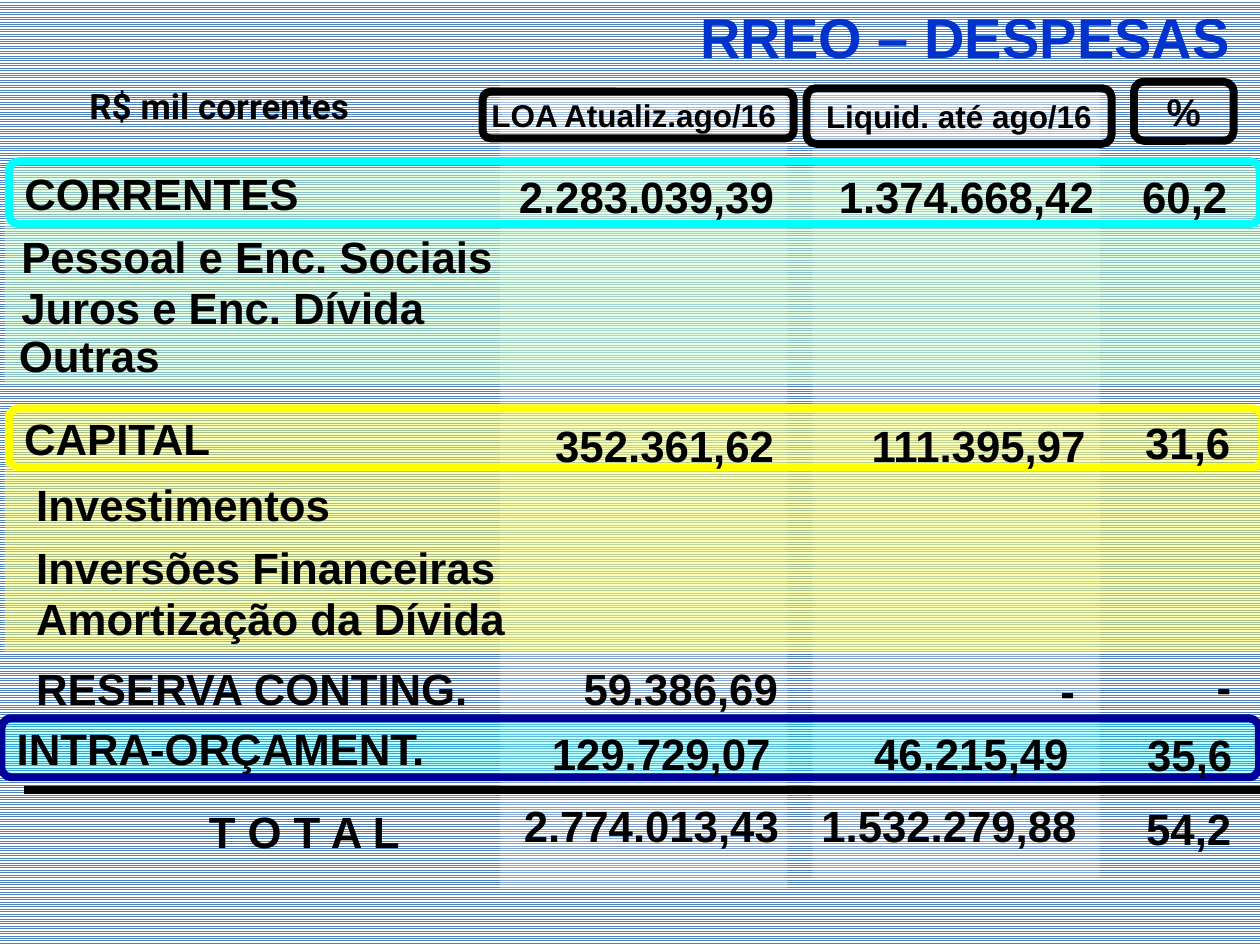
from lxml import etree
from pptx import Presentation
from pptx import util as u
from pptx.dml.color import RGBColor
from pptx.enum import dml, shapes, text
from pptx.oxml.ns import qn

COLORS = {
    "black": "000000", "white": "FFFFFF", "stripe": "4F81BD", "title": "0033CC",
    "green": "CCFFCC", "lemon": "FFFF66", "cyan": "00FFFF", "yellow": "FFFF00",
    "navy": "000099",
}
LEFT, CENTER, RIGHT = text.PP_ALIGN.LEFT, text.PP_ALIGN.CENTER, text.PP_ALIGN.RIGHT
RECT, ROUND = shapes.MSO_SHAPE.RECTANGLE, shapes.MSO_SHAPE.ROUNDED_RECTANGLE
LINE_WIDTH = u.Pt(4.5)
ROW_HEIGHT = 1.32


def rgb(name):
    return RGBColor.from_string(COLORS[name])


def apply_format(target, values):
    for attribute, value in values.items():
        setattr(target, attribute, value)


def write(frame, wording, size, align, color="black", font="Arial"):
    paragraph = frame.paragraphs[0]
    paragraph.alignment = align
    run = paragraph.add_run()
    run.text = wording
    apply_format(run.font, {"size": u.Pt(size), "bold": True, "name": font})
    run.font.color.rgb = rgb(color)


def add_label(slide, wording, box, align=LEFT, size=25, wrap=True, **style):
    label = slide.shapes.add_textbox(*map(u.Cm, box))
    apply_format(label.text_frame, {
        "word_wrap": wrap, "auto_size": text.MSO_AUTO_SIZE.SHAPE_TO_FIT_TEXT})
    write(label.text_frame, wording, size, align, **style)


def add_box(slide, kind, box, fill=None, opacity=100, outline=None):
    panel = slide.shapes.add_shape(kind, *map(u.Cm, box))
    panel.shadow.inherit = False
    if fill:
        panel.fill.solid()
        panel.fill.fore_color.rgb = rgb(fill)
        tint = panel.fill._xPr.find(qn("a:solidFill"))[0]
        etree.SubElement(tint, qn("a:alpha"), val=str(opacity * 1000))
    else:
        panel.fill.background()
    if outline:
        panel.line.color.rgb = rgb(outline)
        panel.line.width = LINE_WIDTH
    else:
        panel.line.fill.background()
    return panel


def add_frame(slide, wording, box, align=LEFT, size=25, **look):
    frame = add_box(slide, ROUND, box, **look)
    apply_format(frame.text_frame, {
        "word_wrap": False, "vertical_anchor": text.MSO_ANCHOR.MIDDLE})
    write(frame.text_frame, wording, size, align)


def add_figures(slide, figures):
    for wording, left, top, width in figures:
        add_label(slide, wording, (left, top, width, ROW_HEIGHT), RIGHT)


def add_details(slide, left, details):
    for wording, top, width in details:
        add_label(slide, wording, (left, top, width, ROW_HEIGHT))


def add_total_rule(slide):
    y = u.Cm(15.93)
    rule = slide.shapes.add_connector(
        shapes.MSO_CONNECTOR.STRAIGHT, u.Cm(0.48), y, u.Cm(25.43), y)
    rule.line.color.rgb = rgb("black")
    rule.line.width = LINE_WIDTH
    etree.SubElement(rule._element.spPr, qn("a:effectLst"))


def main():
    deck = Presentation()
    deck.slide_width, deck.slide_height = u.Cm(25.4), u.Cm(19.05)
    slide = deck.slides.add_slide(deck.slide_layouts[6])

    # Striped background
    backdrop = slide.background.fill
    backdrop.patterned()
    backdrop.pattern = dml.MSO_PATTERN.NARROW_HORIZONTAL
    backdrop.fore_color.rgb = rgb("stripe")
    backdrop.back_color.rgb = rgb("white")

    # Value columns and their headings
    columns = [
        ("LOA Atualiz.ago/16 ", (10.08, 1.7, 5.79, 16.21), (9.73, 1.85, 6.27, 0.94)),
        ("Liquid. até ago/16", (16.38, 1.68, 5.79, 16.03), (16.26, 1.78, 6.15, 1.12)),
    ]
    for heading, band, heading_box in columns:
        add_box(slide, RECT, band, fill="white", opacity=28)
        add_frame(slide, heading, heading_box, CENTER, 18,
                  fill="white", opacity=28, outline="black")

    # Current expenses panel
    add_box(slide, RECT, (0.1, 3.38, 25.4, 4.37), fill="green", opacity=50)
    add_details(slide, 0.18, [("Pessoal e Enc. Sociais", 4.5, 10.36),
                              ("Juros e Enc. Dívida", 5.54, 9.17)])
    add_details(slide, 0.13, [("Outras", 6.5, 5)])
    add_frame(slide, "%", (22.86, 1.65, 2.01, 1.19), CENTER, 22, outline="black")

    # Capital expenses panel
    add_box(slide, RECT, (0.1, 8.31, 25.5, 4.83), fill="lemon", opacity=50)
    add_details(slide, 0.48, [("Investimentos", 9.5, 7.37),
                              ("Inversões Financeiras", 10.77, 10.21),
                              ("Amortização da Dívida", 11.81, 10.39)])
    add_label(slide, "R$ mil correntes", (0.89, 1.57, 6.4, 1.12), RIGHT, 20,
              wrap=False, font="Roboto")

    # Total
    add_frame(slide, "T O T A L", (0.84, 16.15, 10.59, 1.19), CENTER)
    add_figures(slide, [("2.774.013,43", 8.94, 15.98, 7.01),
                        ("1.532.279,88", 14.94, 15.98, 7.01),
                        ("54,2", 22.68, 16.03, 2.39)])

    # Contingency reserve
    add_details(slide, 0.48, [("RESERVA CONTING.", 13.21, 10.39)])
    add_figures(slide, [("59.386,69", 9.73, 13.21, 6.2),
                        ("-", 15.72, 13.26, 6.2),
                        ("-", 22.68, 13.18, 2.39)])

    # Title
    add_label(slide, "RREO – DESPESAS", (3.1, -0.08, 21.95, 1.63), RIGHT, 32,
              color="title")

    # Framed rows
    add_frame(slide, "CORRENTES", (0.18, 3.25, 25.22, 1.27), outline="cyan")
    add_figures(slide, [("2.283.039,39", 9.65, 3.3, 6.2),
                        ("1.374.668,42", 16.1, 3.3, 6.2),
                        ("60,2", 22.25, 3.3, 2.74)])
    add_frame(slide, "CAPITAL", (0.18, 8.23, 25.27, 1.19), outline="yellow")
    add_figures(slide, [("352.361,62", 9.37, 8.31, 6.48),
                        ("111.395,97", 15.65, 8.31, 6.48),
                        ("31,6", 22.66, 8.26, 2.39)])
    add_total_rule(slide)
    add_frame(slide, "INTRA-ORÇAMENT.", (0.03, 14.48, 25.35, 1.19),
              fill="cyan", opacity=27, outline="navy")
    add_figures(slide, [("129.729,07", 10.29, 14.53, 5.49),
                        ("46.215,49", 16.48, 14.53, 5.31),
                        ("35,6", 22.35, 14.55, 2.74)])

    deck.save("out.pptx")


if __name__ == "__main__":
    main()
